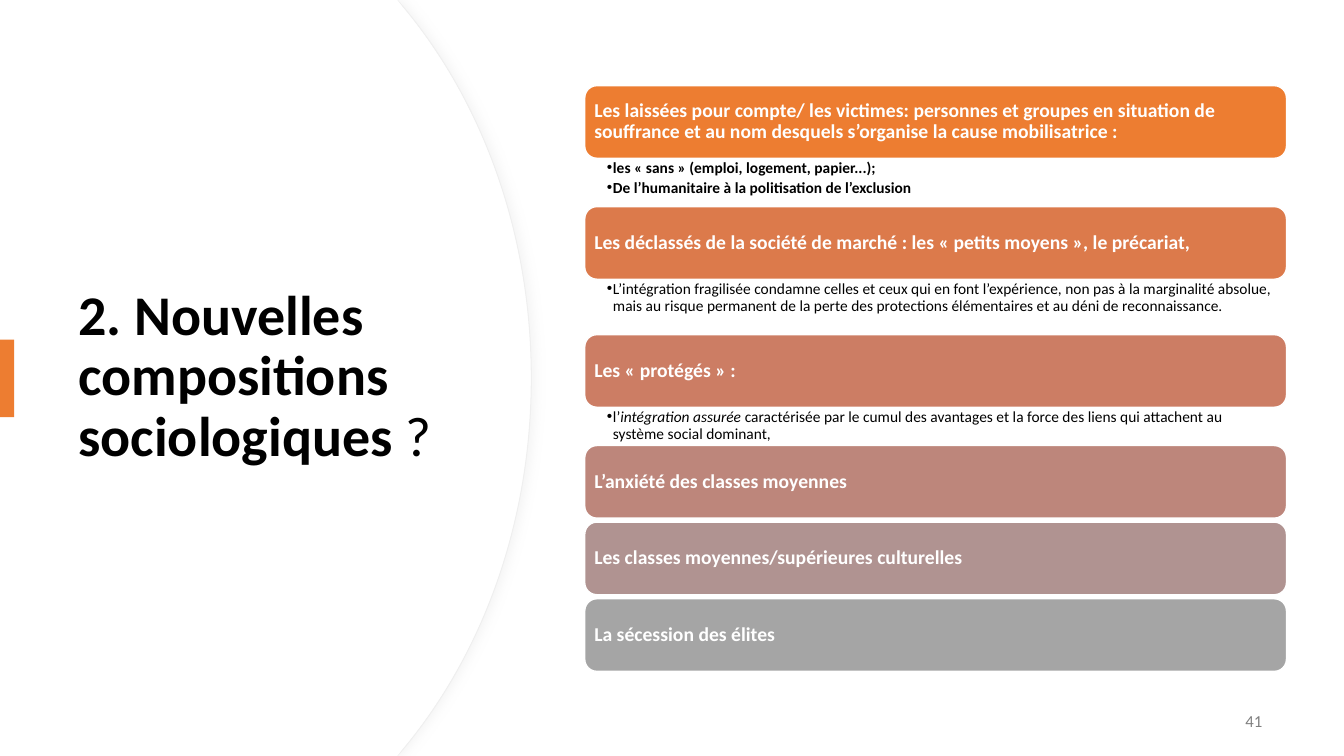
import pptx
import pptx.util
import pptx.dml.color
import pptx.enum.shapes
import pptx.enum.text
import pptx.oxml
import pptx.oxml.ns
from dataclasses import dataclass

Inches, Pt = pptx.util.Inches, pptx.util.Pt
SHAPE = pptx.enum.shapes.MSO_SHAPE
ANCHOR = pptx.enum.text.MSO_ANCHOR
ALIGN = pptx.enum.text.PP_ALIGN
NS = pptx.oxml.ns.nsdecls("a")
qn = pptx.oxml.ns.qn


@dataclass(frozen=True)
class Theme:
    font: str = "Calibri"
    white: str = "FFFFFF"
    black: str = "000000"
    grey: str = "808080"
    accent: str = "ED7D31"
    edge: str = "EFEFEF"
    shadow: str = "D9D9D9"
    title: int = 40
    heading: int = 14
    detail: int = 11
    number: int = 12


def rgb(value):
    return pptx.dml.color.RGBColor.from_string(value)


def write(tf, paragraphs, size, color, font, bold=False, anchor=ANCHOR.TOP,
          align=ALIGN.LEFT, spacing=None, after=0, insets=None, bullet=False):
    """Fill a text frame; each paragraph is a list of (text, run format) pairs."""
    tf.word_wrap = True
    tf.vertical_anchor = anchor
    if insets:
        (tf.margin_left, tf.margin_top,
         tf.margin_right, tf.margin_bottom) = map(Inches, insets)
    for i, runs in enumerate(paragraphs):
        p = tf.paragraphs[0] if i == 0 else tf.add_paragraph()
        p.alignment, p.line_spacing, p.space_after = align, spacing, Pt(after)
        for text, style in runs:
            r = p.add_run()
            r.text = text
            r.font.name, r.font.size = font, Pt(size)
            r.font.color.rgb = rgb(color)
            r.font.bold = style.get("bold", bold)
            r.font.italic = style.get("italic", False)
        if bullet:
            pPr = p._p.get_or_add_pPr()
            pPr.set("marL", str(Inches(0.06)))
            pPr.set("indent", str(Inches(-0.06)))
            pPr.append(pptx.oxml.parse_xml(f'<a:buFont {NS} typeface="Arial"/>'))
            pPr.append(pptx.oxml.parse_xml(f'<a:buChar {NS} char="•"/>'))


class Deck:
    def __init__(self, theme):
        self.theme = theme
        self.prs = pptx.Presentation()
        self.prs.slide_width, self.prs.slide_height = Inches(13.33), Inches(7.5)
        self.s = self.prs.slides.add_slide(self.prs.slide_layouts[6])

    def paint(self, sp, fill, line=None, width=1):
        sp.shadow.inherit = False
        sp.fill.solid()
        sp.fill.fore_color.rgb = rgb(fill)
        if line:
            sp.line.color.rgb = rgb(line)
            sp.line.width = Pt(width)
        else:
            sp.line.fill.background()
        return sp

    def shape(self, kind, box, fill, line=None):
        sp = self.s.shapes.add_shape(kind, *map(Inches, box))
        return self.paint(sp, fill, line)

    def text(self, box, paragraphs, size, color, **style):
        sp = self.s.shapes.add_textbox(*map(Inches, box))
        write(sp.text_frame, paragraphs, size, color, self.theme.font, **style)

    def bar(self, box, heading, fill):
        t = self.theme
        sp = self.shape(SHAPE.ROUNDED_RECTANGLE, box, fill, t.white)
        write(sp.text_frame, [[(heading, {})]], t.heading, t.white, t.font, bold=True,
              anchor=ANCHOR.MIDDLE, spacing=0.9, insets=[0.06] * 4)

    def panel(self, reach, line=None):
        """White panel whose right side bulges out to x = reach."""
        knee = reach - 1.26
        corners = [(3.94, 0), (knee, 0.08), (reach, 3.75), (knee, 7.42),
                   (3.94, 7.5), (0, 7.5)]
        fb = self.s.shapes.build_freeform(0, 0)
        fb.add_line_segments([(Inches(x), Inches(y)) for x, y in corners], close=True)
        sp = fb.convert_to_shape()
        # Bend the two segments that meet at the bulge
        segments = list(sp._element.iter(qn("a:lnTo")))
        upper = [(knee + 0.78, 1.02), (reach, 2.32), (reach, 3.75)]
        lower = [(reach, 5.18), (knee + 0.78, 6.48), (knee, 7.42)]
        for segment, controls in zip(segments[2:4], (upper, lower)):
            points = "".join(f'<a:pt x="{Inches(x)}" y="{Inches(y)}"/>' for x, y in controls)
            segment.getparent().replace(segment, pptx.oxml.parse_xml(
                f'<a:cubicBezTo {NS}>{points}</a:cubicBezTo>'))
        return self.paint(sp, self.theme.white, line, 0.75)

    def cast_shadow(self, sp, color, blur, distance):
        effects = sp._element.spPr.find(qn("a:effectLst"))
        effects.append(pptx.oxml.parse_xml(
            f'<a:outerShdw {NS} blurRad="{Pt(blur)}" dist="{Pt(distance)}" dir="0" '
            f'algn="l" rotWithShape="0">'
            f'<a:srgbClr val="{color}"><a:alpha val="25000"/></a:srgbClr></a:outerShdw>'))


# Each group: heading, bar colour, gap below the bar, details bold, detail paragraphs
GROUPS = [
    ("Les laissées pour compte/ les victimes: personnes et groupes en situation de "
     "souffrance et au nom desquels s’organise la cause mobilisatrice :",
     "ED7D31", 0.48, True,
     [[("les « sans » (emploi, logement, papier...);", {})],
      [("De l’humanitaire à la politisation de l’exclusion", {})]]),
    ("Les déclassés de la société de marché : les « petits moyens », le précariat,",
     "DC7A4B", 0.55, False,
     [[("L’intégration fragilisée condamne celles et ceux qui en font l’expérience, "
        "non pas à la marginalité absolue, mais au risque permanent de la perte des "
        "protections élémentaires et au déni de reconnaissance.", {})]]),
    ("Les « protégés » :", "CC7D64", 0.38, False,
     [[("l’", {}), ("intégration assurée ", {"italic": True}),
       ("caractérisée par le cumul des avantages et la force des liens qui attachent "
        "au système social dominant,", {})]]),
    ("L’anxiété des classes moyennes", "BD867B", 0.04, False, []),
    ("Les classes moyennes/supérieures culturelles", "B09391", 0.04, False, []),
    ("La sécession des élites", "A5A5A5", 0, False, []),
]
LEFT, TOP, WIDTH, BAR_HEIGHT = 5.8, 0.85, 6.96, 0.72


def main():
    t = Theme()
    deck = Deck(t)

    # Curved title panel: shadowed edge, then a plain face
    deck.cast_shadow(deck.panel(5.27, t.edge), t.shadow, 7, 3)
    deck.panel(5.26)

    # Title, accent tab and slide number
    deck.text((0.68, 1.27, 3.94, 4.95),
              [[("2. Nouvelles compositions sociologiques", {"bold": True}), (" ?", {})]],
              t.title, t.black, anchor=ANCHOR.MIDDLE, spacing=0.9)
    deck.shape(SHAPE.RECTANGLE, (0, 3.37, 0.14, 0.77), t.accent)
    deck.text((9.62, 6.95, 3, 0.4), [[("41", {})]], t.number, t.grey,
              anchor=ANCHOR.MIDDLE, align=ALIGN.RIGHT)

    # Stack of social groups
    y = TOP
    for heading, fill, gap, bold, details in GROUPS:
        deck.bar((LEFT, y, WIDTH, BAR_HEIGHT), heading, fill)
        y += BAR_HEIGHT
        if details:
            deck.text((LEFT, y, WIDTH, gap), details, t.detail, t.black, bold=bold,
                      spacing=0.9, after=2.2, insets=(0.22, 0.02, 0.11, 0.02), bullet=True)
        y += gap

    deck.prs.save("out.pptx")


if __name__ == "__main__":
    main()
